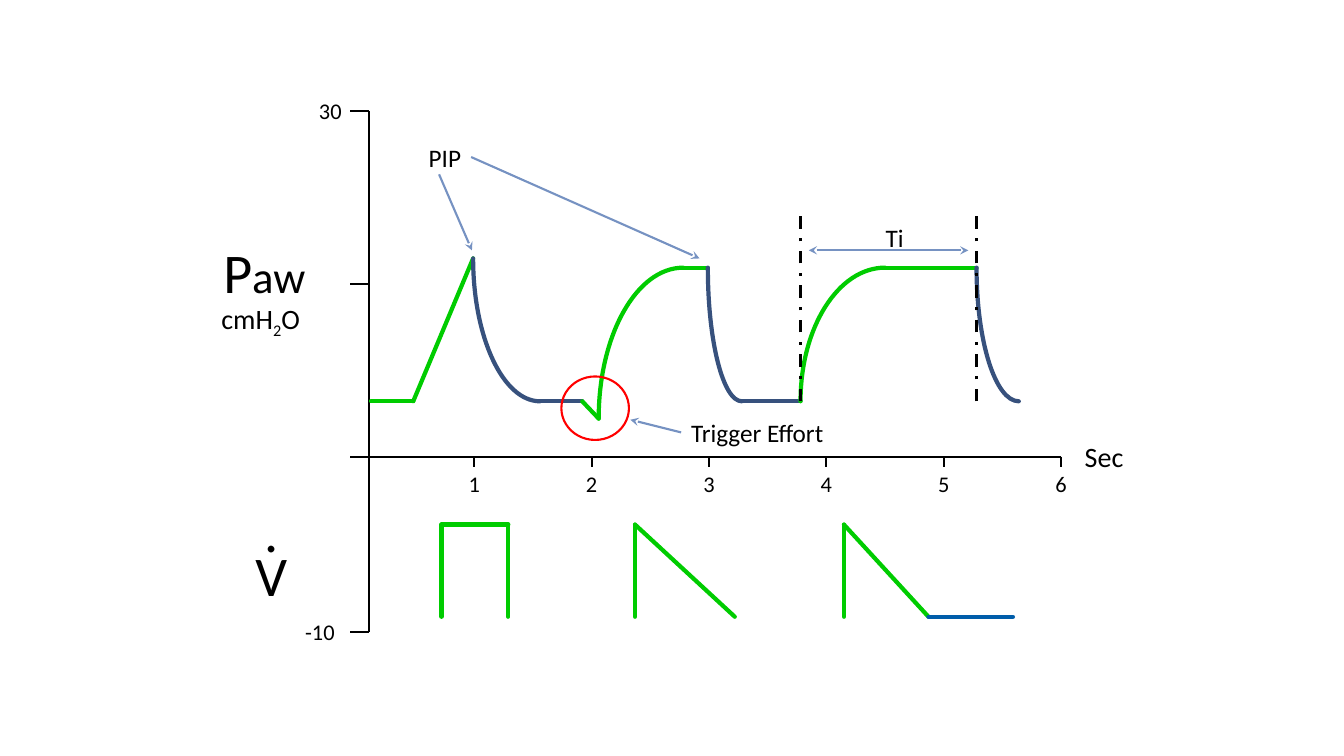
from itertools import pairwise

from lxml import etree
from pptx import Presentation, util as u
from pptx.dml.color import RGBColor
from pptx.enum import dml, shapes, text
from pptx.oxml.ns import qn

# Chart grid: columns are seconds, rows are pressure units
ORIGIN_X, ORIGIN_Y = 3.54, 4.53
SECOND, UNIT = 1.164, 0.1143

BLACK, GREEN, NAVY, BLUE = "000000", "00CC00", "37517D", "005DAA"
ARROW, RED = "7692C2", "FF0000"
AXIS, TICK_END, BOTTOM = 0.1, -0.06, -15.2
BASELINE, PLATEAU, PEAK, TRIGGER = 4.8, 16.4, 17.2, 3.3
FLOW_TOP, FLOW_BASE = -5.9, -13.9
LEFT, CENTER, RIGHT = text.PP_ALIGN.LEFT, text.PP_ALIGN.CENTER, text.PP_ALIGN.RIGHT


def color(value):
    return RGBColor.from_string(value)


def place(point):
    second, pressure = point
    return (u.Inches(ORIGIN_X + second * SECOND),
            u.Inches(ORIGIN_Y - pressure * UNIT))


def style_line(shape, line_color, width, round_cap=False):
    shape.line.color.rgb = color(line_color)
    shape.line.width = u.Pt(width)
    if round_cap:
        shape.line._get_or_add_ln().set("cap", "rnd")


def add_line(slide, start, end, line_color=BLACK, width=1.5, round_cap=False):
    line = slide.shapes.add_connector(
        shapes.MSO_CONNECTOR.STRAIGHT, *place(start), *place(end))
    style_line(line, line_color, width, round_cap)
    etree.SubElement(line._element.spPr, qn("a:effectLst"))
    return line


def add_arrow(slide, start, end, ends=("tailEnd",)):
    arrow = add_line(slide, start, end, ARROW)
    for name in ends:
        etree.SubElement(arrow.line._get_or_add_ln(), qn(f"a:{name}"), type="stealth")
    return arrow


def add_wave(slide, line_color, *points):
    for start, end in pairwise(points):
        add_line(slide, start, end, line_color, 3, True)


def add_curve(slide, line_color, upright, level):
    """Quarter ellipse that leaves one point upright and meets the other level."""
    bend = 0.5523
    (x1, y1), (x2, y2) = place(upright), place(level)
    builder = slide.shapes.build_freeform(x1, y1)
    builder.add_line_segments([
        (x1, round(y1 + bend * (y2 - y1))),
        (round(x2 + bend * (x1 - x2)), y2),
        (x2, y2)], close=False)
    curve = builder.convert_to_shape()
    # Turn the three segments into one Bezier segment
    segments = list(curve._element.iter(qn("a:lnTo")))
    bezier = etree.SubElement(segments[0].getparent(), qn("a:cubicBezTo"))
    for segment in segments:
        bezier.append(segment[0])
        segment.getparent().remove(segment)
    curve.fill.background()
    curve.shadow.inherit = False
    style_line(curve, line_color, 3, True)


def add_label(slide, runs, center, size, font_size, align=LEFT):
    """Text box around a grid point; runs hold (text, font size, baseline)."""
    width, height = map(u.Inches, size)
    x, y = place(center)
    box = slide.shapes.add_textbox(x - width // 2, y - height // 2, width, height)
    frame = box.text_frame
    frame.word_wrap = False
    frame.auto_size = text.MSO_AUTO_SIZE.SHAPE_TO_FIT_TEXT
    frame.vertical_anchor = text.MSO_ANCHOR.MIDDLE
    paragraph = frame.paragraphs[0]
    paragraph.alignment = align
    paragraph.font.name = "Calibri"
    paragraph.font.size = u.Pt(font_size)
    paragraph.font.color.rgb = color(BLACK)
    for words, run_size, baseline in runs:
        run = paragraph.add_run()
        run.text = words
        if run_size:
            run.font.size = u.Pt(run_size)
        if baseline:
            run.font._element.set("baseline", str(baseline))
    return box


def add_word(slide, words, *layout):
    return add_label(slide, [(words, None, None)], *layout)


def draw_axes(slide):
    add_line(slide, (AXIS, 30), (AXIS, BOTTOM))
    for pressure in (30, 15, 0, BOTTOM):
        add_line(slide, (AXIS, pressure), (TICK_END, pressure))
    add_line(slide, (AXIS, 0), (6, 0))
    for second in range(1, 7):
        add_line(slide, (second, 0), (second, -0.9))
        add_word(slide, str(second), (second, -2.3), (0.32, 0.37), 16, CENTER)
    add_word(slide, "30", (-0.23, 30), (0.43, 0.37), 16, RIGHT)
    add_word(slide, "-10", (-0.32, BOTTOM), (0.5, 0.37), 16, RIGHT)
    add_word(slide, "Sec", (6.37, 0), (0.59, 0.44), 20)
    add_label(slide, [("P", 40, None), ("aw", None, None)],
              (-0.78, 16.1), (1.03, 0.77), 32)
    add_label(slide, [("cmH", None, None), ("2", None, -25000), ("O", None, None)],
              (-0.78, 11.8), (1.07, 0.44), 20)
    add_word(slide, "V", (-0.73, -10.2), (0.53, 0.77), 40, CENTER)
    add_word(slide, ".", (-0.73, -6.4), (0.35, 0.77), 40, CENTER)


def draw_pressure(slide):
    # First breath
    add_wave(slide, GREEN, (0.12, BASELINE), (0.48, BASELINE), (0.99, PEAK))
    add_curve(slide, NAVY, (0.99, PEAK), (1.56, BASELINE))
    add_wave(slide, NAVY, (1.56, BASELINE), (1.92, BASELINE))
    # Triggered breath
    add_wave(slide, GREEN, (1.92, BASELINE), (2.06, TRIGGER))
    add_curve(slide, GREEN, (2.06, TRIGGER), (2.78, PLATEAU))
    add_wave(slide, GREEN, (2.78, PLATEAU), (2.99, PLATEAU))
    add_curve(slide, NAVY, (2.99, PLATEAU), (3.28, BASELINE))
    add_wave(slide, NAVY, (3.28, BASELINE), (3.78, BASELINE))
    # Breath with long plateau
    add_curve(slide, GREEN, (3.78, BASELINE), (4.5, PLATEAU))
    add_wave(slide, GREEN, (4.5, PLATEAU), (5.28, PLATEAU))
    add_curve(slide, NAVY, (5.28, PLATEAU), (5.64, BASELINE))


def draw_flow(slide):
    add_wave(slide, GREEN, (0.72, FLOW_BASE), (0.72, FLOW_TOP),
             (1.29, FLOW_TOP), (1.29, FLOW_BASE))
    for start, end in ((2.37, 3.22), (4.15, 4.87)):
        add_wave(slide, GREEN, (start, FLOW_BASE), (start, FLOW_TOP), (end, FLOW_BASE))
    add_wave(slide, BLUE, (4.87, FLOW_BASE), (5.59, FLOW_BASE))


def draw_callouts(slide):
    # Trigger effort
    trigger = add_word(slide, "Trigger Effort", (3.42, 2.1), (1.53, 0.4), 18)
    add_arrow(slide, (2.76, 2.1), (2.33, 3.2)).begin_connect(trigger, 1)
    x, y = place((2.03, 4.2))
    width, height = u.Inches(0.67), u.Inches(0.63)
    circle = slide.shapes.add_shape(
        shapes.MSO_SHAPE.OVAL, x - width // 2, y - height // 2, width, height)
    circle.fill.background()
    circle.shadow.inherit = False
    style_line(circle, RED, 1.5)
    # Peak pressure
    peak = add_word(slide, "PIP", (0.75, 26), (0.52, 0.4), 18)
    add_arrow(slide, (0.7, 24.5), (0.98, 17.9))
    add_arrow(slide, (0.98, 26), (2.92, PEAK)).begin_connect(peak, 3)
    # Inspiratory time
    for second in (3.78, 5.28):
        limit = add_line(slide, (second, BASELINE), (second, 21.6), BLACK, 2.25)
        limit.line.dash_style = dml.MSO_LINE.DASH_DOT
    add_word(slide, "Ti", (4.61, 19), (0.44, 0.42), 18)
    add_arrow(slide, (3.85, 17.9), (5.21, 17.9), ("headEnd", "tailEnd"))


def main():
    presentation = Presentation()
    presentation.slide_width = u.Inches(13.33)
    presentation.slide_height = u.Inches(7.5)
    slide = presentation.slides.add_slide(presentation.slide_layouts[6])
    draw_axes(slide)
    draw_pressure(slide)
    draw_flow(slide)
    draw_callouts(slide)
    presentation.save("out.pptx")


if __name__ == "__main__":
    main()
